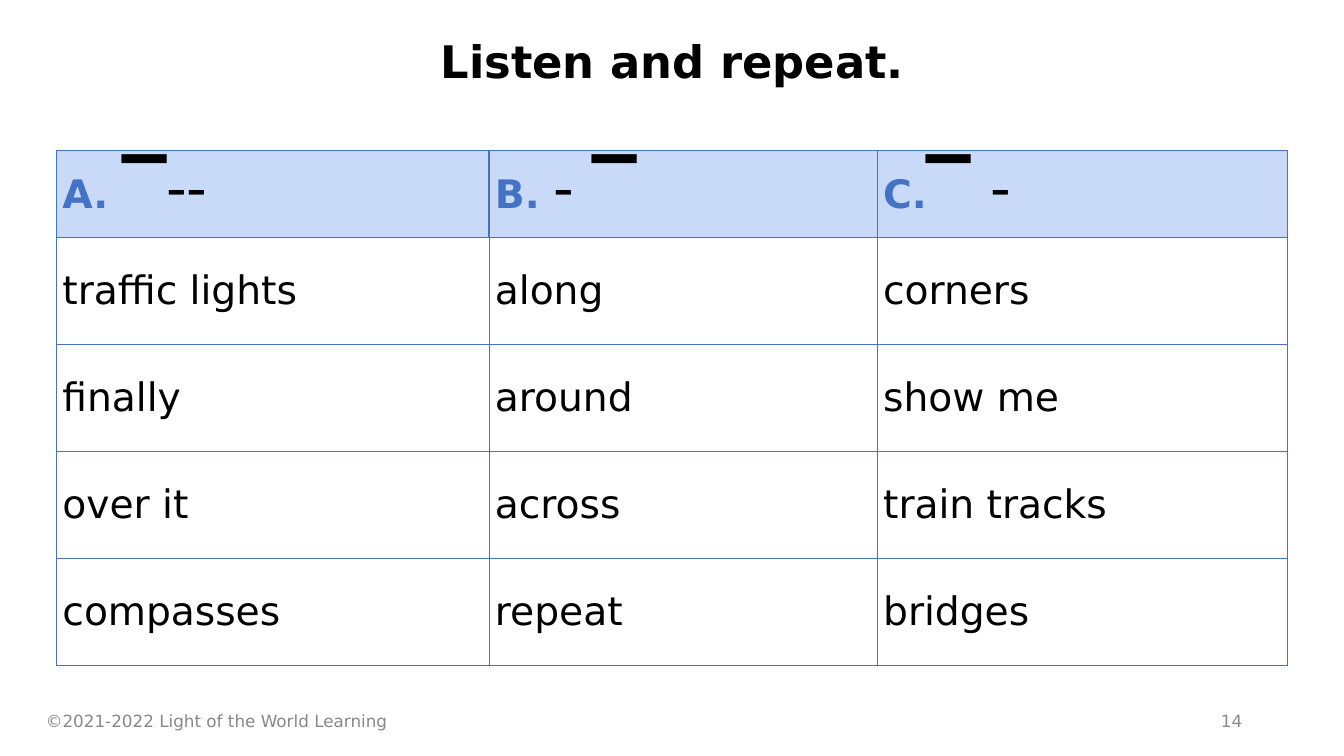
from dataclasses import dataclass

from lxml.etree import SubElement
from pptx import Presentation
from pptx.dml.color import RGBColor
from pptx.enum.text import MSO_ANCHOR, PP_ALIGN
from pptx.oxml.ns import qn
from pptx.util import Inches, Pt

FONT = "DejaVu Sans"
COLORS = {"black": "000000", "blue": "4472C4", "header": "C9DAF8", "gray": "888888"}
COLUMN_WIDTHS = [4.29, 3.85, 4.07]
ROW_HEIGHTS = [0.87] + [1.06] * 4
WORDS = [
    ["traffic lights", "along", "corners"],
    ["finally", "around", "show me"],
    ["over it", "across", "train tracks"],
    ["compasses", "repeat", "bridges"],
]


@dataclass
class Span:
    text: str
    size: float = 28
    color: str = "black"
    bold: bool = False


@dataclass
class Label:
    span: Span
    left: float
    width: float
    align: PP_ALIGN


# Stress patterns: a long bar is a stressed syllable, a dash an unstressed one
HEADERS = [
    [Span("A. ", 28, "blue", True), Span("▔", 41, bold=True), Span("--", 41)],
    [Span("B. ", 28, "blue", True), Span("- ", 41), Span("▔", 41, bold=True)],
    [Span("C.", 28, "blue", True), Span("▔ ", 41, bold=True), Span("-", 41)],
]
LABELS = [
    Label(Span("©2021-2022 Light of the World Learning", 12, "gray"), 0.23, 3.84, PP_ALIGN.CENTER),
    Label(Span("14", 12, "gray"), 9.42, 3, PP_ALIGN.RIGHT),
]


def write_spans(paragraph, spans: list[Span]) -> None:
    for span in spans:
        run = paragraph.add_run()
        run.text = span.text
        run.font.name = FONT
        run.font.size = Pt(span.size)
        run.font.bold = span.bold
        run.font.color.rgb = RGBColor.from_string(COLORS[span.color])


def set_borders(cell, widths: dict[str, float]) -> None:
    """Draw the four sides; call before filling, as lines precede the fill."""
    properties = cell._tc.get_or_add_tcPr()
    for side, width in widths.items():
        line = SubElement(properties, qn(f"a:ln{side}"), w=str(Pt(width)))
        fill = SubElement(line, qn("a:solidFill"))
        SubElement(fill, qn("a:srgbClr"), val=COLORS["blue"])


def fill_cell(cell, spans: list[Span], is_header: bool) -> None:
    cell.margin_left = cell.margin_right = Inches(0.06)
    cell.margin_top = cell.margin_bottom = 0
    cell.vertical_anchor = MSO_ANCHOR.TOP if is_header else MSO_ANCHOR.MIDDLE
    side_width = 1 if is_header else 0.75
    set_borders(cell, {"L": side_width, "R": side_width, "T": side_width, "B": 0.75})
    paragraph = cell.text_frame.paragraphs[0]
    if is_header:
        cell.fill.solid()
        cell.fill.fore_color.rgb = RGBColor.from_string(COLORS["header"])
        paragraph.line_spacing = 1.07
    else:
        cell.fill.background()
    write_spans(paragraph, spans)


def add_title(page) -> None:
    title = page.shapes.title
    title.left, title.top = Inches(2.89), Inches(0.28)
    title.width, title.height = Inches(7.56), Inches(0.84)
    title.text_frame.vertical_anchor = MSO_ANCHOR.TOP
    paragraph = title.text_frame.paragraphs[0]
    paragraph.alignment = PP_ALIGN.CENTER
    write_spans(paragraph, [Span("Listen and repeat.", 32, bold=True)])


def add_word_table(page) -> None:
    rows = HEADERS, *[[[Span(word)] for word in row] for row in WORDS]
    frame = page.shapes.add_table(
        len(rows), len(COLUMN_WIDTHS), Inches(0.56), Inches(1.49),
        Inches(sum(COLUMN_WIDTHS)), Inches(sum(ROW_HEIGHTS)))
    table = frame.table
    table.first_row = table.horz_banding = False
    for column, width in zip(table.columns, COLUMN_WIDTHS):
        column.width = Inches(width)
    for row, height in zip(table.rows, ROW_HEIGHTS):
        row.height = Inches(height)
    for row_index, row in enumerate(rows):
        for column_index, spans in enumerate(row):
            fill_cell(table.cell(row_index, column_index), spans, row_index == 0)


def add_label(page, label: Label) -> None:
    box = page.shapes.add_textbox(
        Inches(label.left), Inches(6.95), Inches(label.width), Inches(0.4))
    box.text_frame.word_wrap = True
    box.text_frame.vertical_anchor = MSO_ANCHOR.MIDDLE
    paragraph = box.text_frame.paragraphs[0]
    paragraph.alignment = label.align
    write_spans(paragraph, [label.span])


def main() -> None:
    deck = Presentation()
    deck.slide_width, deck.slide_height = Inches(13.33), Inches(7.5)
    page = deck.slides.add_slide(deck.slide_layouts.get_by_name("Title Only"))
    add_title(page)
    add_word_table(page)
    # Footer and page number
    for label in LABELS:
        add_label(page, label)
    deck.save("out.pptx")


if __name__ == "__main__":
    main()
